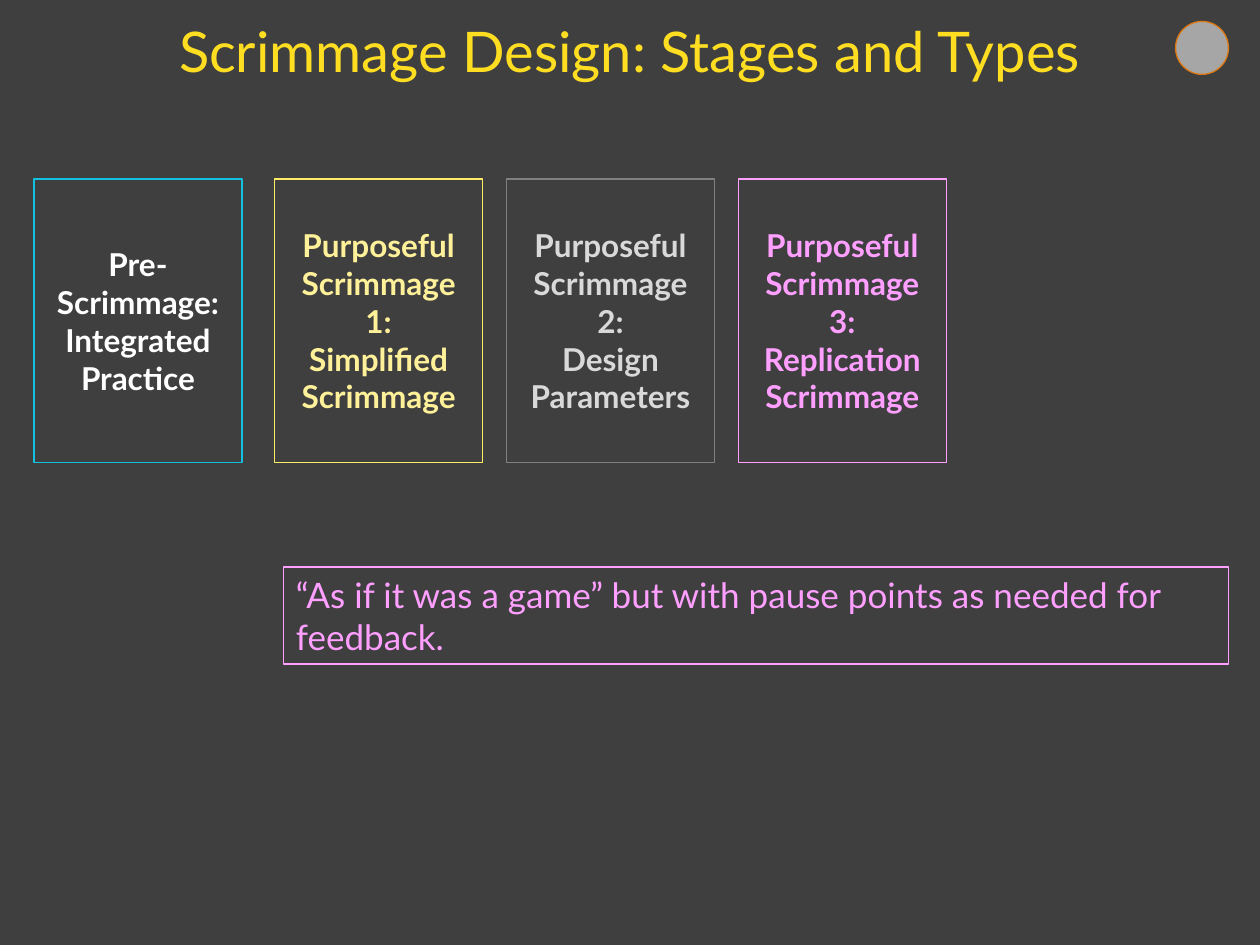
from dataclasses import dataclass

from pptx import Presentation
from pptx.dml.color import RGBColor
from pptx.enum.shapes import MSO_SHAPE
from pptx.enum.text import MSO_ANCHOR, PP_ALIGN
from pptx.util import Inches, Pt


@dataclass(frozen=True)
class Theme:
    font: str = "Lato"
    back: str = "3F3F3F"
    title: str = "FFDE22"
    white: str = "FFFFFF"
    cyan: str = "12C1DF"
    gold: str = "FFEB66"
    cream: str = "FFF199"
    gray: str = "808080"
    pale: str = "D9D9D9"
    pink: str = "FF9FFF"
    dot: str = "A6A6A6"
    rim: str = "DD7811"
    head_size: int = 32
    note_size: int = 20
    card_size: int = 18
    line: float = 0.75


@dataclass(frozen=True)
class Box:
    left: float
    top: float
    width: float
    height: float

    def place(self) -> tuple:
        return tuple(Inches(n) for n in (self.left, self.top, self.width, self.height))


@dataclass(frozen=True)
class Stage:
    left: float
    lines: tuple[str, ...]
    edge: str
    ink: str


THEME = Theme()
FIRST, STEP = 2.18, 1.84
STAGES = (
    Stage(0.27, ("Pre-Scrimmage:", "Integrated", "Practice"), THEME.cyan, THEME.white),
) + tuple(
    Stage(FIRST + i * STEP, ("Purposeful", f"Scrimmage {i + 1}:", kind), edge, ink)
    for i, (kind, edge, ink) in enumerate((
        ("Simplified Scrimmage", THEME.gold, THEME.cream),
        ("Design Parameters", THEME.gray, THEME.pale),
        ("Replication Scrimmage", THEME.pink, THEME.pink),
    ))
)


def color(code: str) -> RGBColor:
    return RGBColor.from_string(code)


def add_form(slide, kind: MSO_SHAPE, box: Box, edge: str, fill: str | None = None):
    form = slide.shapes.add_shape(kind, *box.place())
    form.shadow.inherit = False
    if fill:
        form.fill.solid()
        form.fill.fore_color.rgb = color(fill)
    else:
        form.fill.background()
    form.line.color.rgb = color(edge)
    form.line.width = Pt(THEME.line)
    return form


def write(form, lines: tuple[str, ...], size: int, ink: str, bold: bool = False,
          align: PP_ALIGN = PP_ALIGN.CENTER,
          anchor: MSO_ANCHOR = MSO_ANCHOR.MIDDLE) -> None:
    frame = form.text_frame
    frame.word_wrap = True
    frame.vertical_anchor = anchor
    for i, line in enumerate(lines):
        para = frame.add_paragraph() if i else frame.paragraphs[0]
        para.alignment = align
        run = para.add_run()
        run.text = line
        run.font.name = THEME.font
        run.font.size = Pt(size)
        run.font.bold = bold
        run.font.color.rgb = color(ink)


def main() -> None:
    deck = Presentation()
    deck.slide_width, deck.slide_height = Inches(10), Inches(7.5)
    slide = deck.slides.add_slide(deck.slide_layouts[6])
    slide.background.fill.solid()
    slide.background.fill.fore_color.rgb = color(THEME.back)

    add_form(slide, MSO_SHAPE.OVAL, Box(9.33, 0.17, 0.42, 0.42), THEME.rim, THEME.dot)

    note = add_form(slide, MSO_SHAPE.RECTANGLE, Box(2.25, 4.5, 7.5, 0.77), THEME.pink)
    write(note, ("“As if it was a game” but with pause points as needed for feedback.",),
          THEME.note_size, THEME.pink, align=PP_ALIGN.LEFT, anchor=MSO_ANCHOR.TOP)

    for stage in STAGES:
        card = add_form(slide, MSO_SHAPE.RECTANGLE,
                        Box(stage.left, 1.42, 1.65, 2.25), stage.edge)
        write(card, stage.lines, THEME.card_size, stage.ink, bold=True)

    title = slide.shapes.add_textbox(*Box(0, 0.08, 10, 0.63).place())
    write(title, ("Scrimmage Design: Stages and Types",), THEME.head_size, THEME.title)

    deck.save("out.pptx")


if __name__ == "__main__":
    main()
